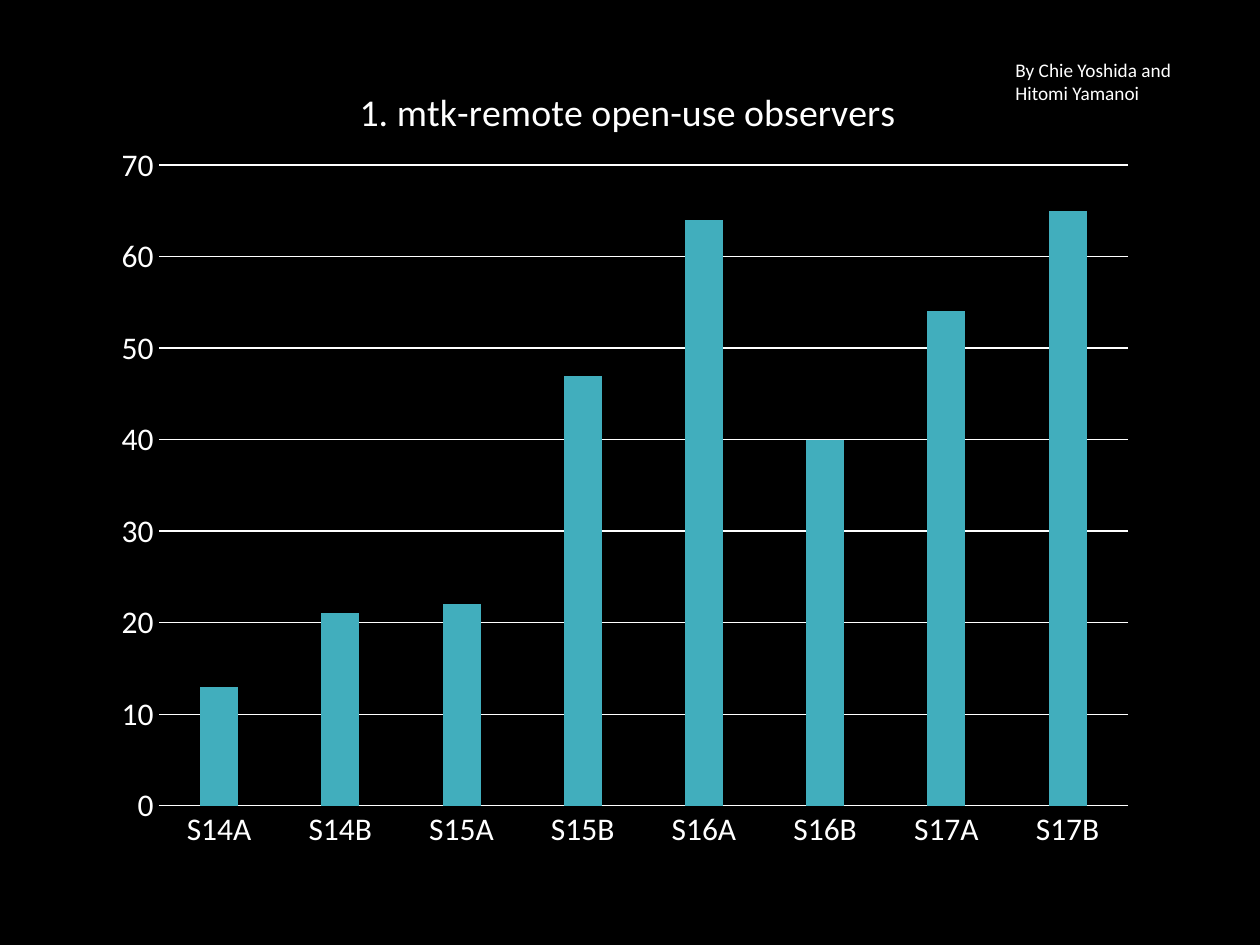
from pptx import Presentation
from pptx.chart.data import CategoryChartData
from pptx.dml.color import RGBColor
from pptx.enum.chart import XL_CHART_TYPE, XL_TICK_MARK
from pptx.enum.text import MSO_AUTO_SIZE
from pptx.oxml import parse_xml
from pptx.oxml.ns import nsdecls
from pptx.util import Inches, Pt

COLORS = {"back": "000000", "text": "FFFFFF", "bar": "41AEBD"}
COUNTS = {"S14A": 13, "S14B": 21, "S15A": 22, "S15B": 47,
          "S16A": 64, "S16B": 40, "S17A": 54, "S17B": 65}


def rgb(name):
    return RGBColor.from_string(COLORS[name])


def set_all(obj, values):
    for key, value in values.items():
        setattr(obj, key, value)


def set_font(font, size):
    set_all(font, {"name": "Calibri", "size": Pt(size), "bold": False})
    font.color.rgb = rgb("text")


def set_line(line):
    line.color.rgb = rgb("text")
    line.width = Pt(0.75)


def place(node, index, **parts):
    """Give a chart part a manual layout, in fractions of the chart."""
    for old in node.xpath("c:layout"):
        node.remove(old)
    body = "".join(f'<c:{key} val="{value}"/>' for key, value in parts.items())
    node.insert(index, parse_xml(
        f'<c:layout {nsdecls("c")}><c:manualLayout>{body}'
        "</c:manualLayout></c:layout>"))


def add_bars(slide):
    data = CategoryChartData()
    data.categories = list(COUNTS)
    data.add_series("Series 1", list(COUNTS.values()))
    chart = slide.shapes.add_chart(
        XL_CHART_TYPE.COLUMN_CLUSTERED, Inches(0.8), Inches(0.29),
        Inches(8.33), Inches(6.58), data).chart
    set_font(chart.font, 18)
    chart.has_legend = False

    frame = chart.chart_title.text_frame
    frame.text = "1. mtk-remote open-use observers"
    set_font(frame.paragraphs[0].runs[0].font, 21.6)

    plot = chart.plots[0]
    set_all(plot, {"gap_width": 219, "overlap": -27,
                   "vary_by_categories": False})
    fill = plot.series[0].format.fill
    fill.solid()
    fill.fore_color.rgb = rgb("bar")

    for axis in (chart.category_axis, chart.value_axis):
        set_all(axis, {"major_tick_mark": XL_TICK_MARK.NONE,
                       "minor_tick_mark": XL_TICK_MARK.NONE})
        set_font(axis.tick_labels.font, 18)
    set_line(chart.category_axis.format.line)
    scale = chart.value_axis
    set_all(scale, {"minimum_scale": 0, "maximum_scale": 70, "major_unit": 10,
                    "has_major_gridlines": True})
    scale.format.line.fill.background()
    set_line(scale.major_gridlines.format.line)

    root = chart.element
    place(root.xpath("c:chart/c:title")[0], 1,
          xMode="edge", yMode="edge", x=0.24, y=0.05)
    place(root.xpath("c:chart/c:plotArea")[0], 0, layoutTarget="inner",
          xMode="edge", yMode="edge", x=0.055, y=0.155, w=0.924, h=0.773)


def add_note(slide, text):
    box = slide.shapes.add_textbox(
        Inches(7.96), Inches(0.41), Inches(1.75), Inches(0.47))
    frame = box.text_frame
    set_all(frame, {"word_wrap": True, "text": text,
                    "auto_size": MSO_AUTO_SIZE.SHAPE_TO_FIT_TEXT})
    set_font(frame.paragraphs[0].runs[0].font, 11)


def main():
    deck = Presentation()
    set_all(deck, {"slide_width": Inches(10), "slide_height": Inches(7.5)})
    slide = deck.slides.add_slide(deck.slide_layouts[6])
    back = slide.background.fill
    back.solid()
    back.fore_color.rgb = rgb("back")
    add_bars(slide)
    add_note(slide, "By Chie Yoshida and Hitomi Yamanoi")
    deck.save("out.pptx")


if __name__ == "__main__":
    main()
